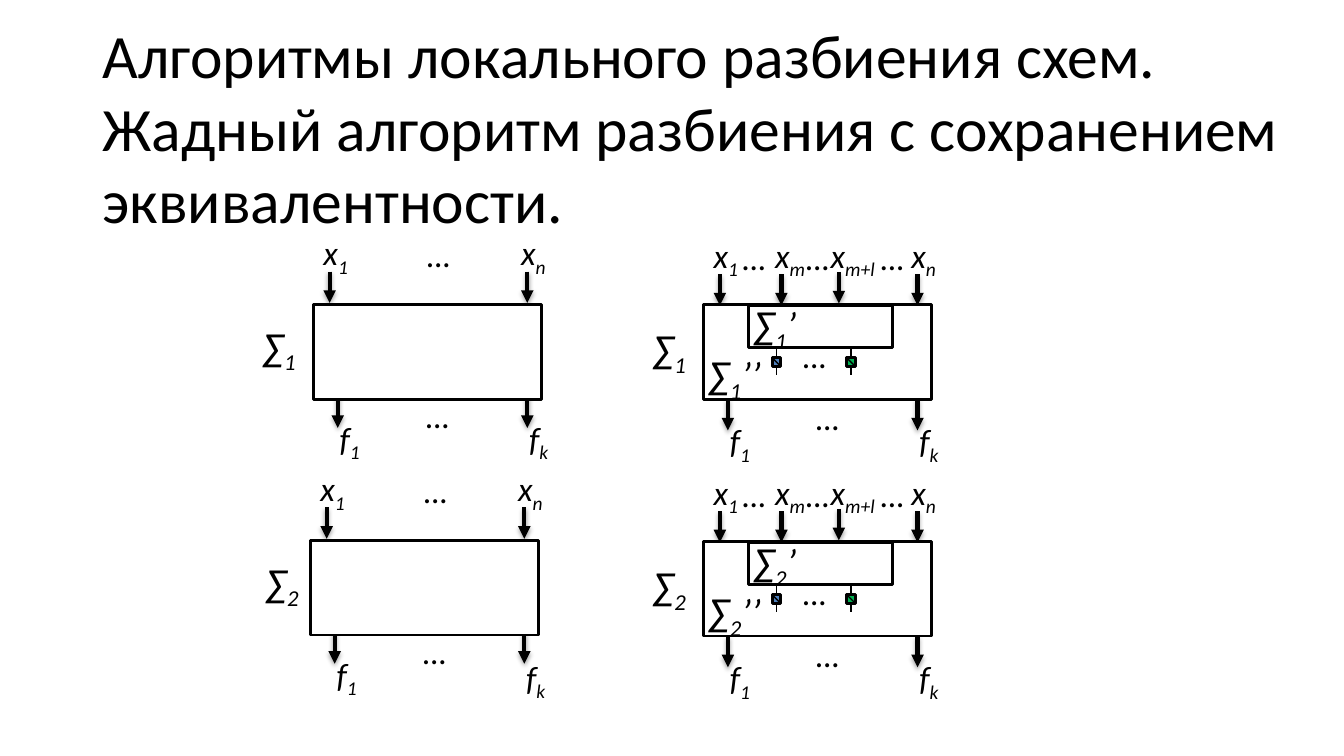
from pptx import Presentation, util as u
from pptx.dml.color import RGBColor
from pptx.enum import shapes, text
from pptx.oxml import parse_xml
from pptx.oxml.ns import nsdecls

BLACK = RGBColor(0x00, 0x00, 0x00)
WHITE = RGBColor(0xFF, 0xFF, 0xFF)
BLUE = RGBColor(0x4F, 0x81, 0xBD)
GREEN = RGBColor(0x00, 0xB0, 0x50)
CELL = 0.1
SHADOW = ('<a:outerShdw blurRad="40000" dist="23000" dir="5400000" rotWithShape="0">'
          '<a:srgbClr val="000000"><a:alpha val="35000"/></a:srgbClr></a:outerShdw>')


def grid(*cells):
    return [u.Inches(c * CELL) for c in cells]


def style(obj, formats):
    for name, value in formats.items():
        setattr(obj, name, value)


class Board:
    font = {"name": "Calibri", "italic": True}
    small, large = 24, 28

    def __init__(self, prs):
        self.s = prs.slides.add_slide(prs.slide_layouts[6])

    def label(self, x, y, w, h, parts, size, frame=None, **font):
        tf = self.s.shapes.add_textbox(*grid(x, y, w, h)).text_frame
        style(tf, {"word_wrap": True, "margin_right": 0, **(frame or {})})
        p = tf.paragraphs[0]
        for i, part in enumerate(parts):
            r = p.add_run()
            r.text = part
            style(r.font, {**self.font, "size": u.Pt(size), **font})
            r.font.color.rgb = BLACK
            if i == 1:
                r.font._element.set("baseline", "-25000")
        return p

    def title(self, x, y, w, h, words):
        frame = {"vertical_anchor": text.MSO_ANCHOR.MIDDLE,
                 "margin_bottom": u.Inches(0.59)}
        p = self.label(x, y, w, h, [words], 44, frame, italic=False)
        p.line_spacing = 0.98

    def variable(self, x, y, *parts, w=6.3):
        self.label(x, y, w, 5.5, parts, self.small)

    def dots(self, x, y):
        self.label(x, y, 6.3, 5, ["…"], self.small)

    def sigma(self, x, y, *parts, w=6.3):
        self.label(x, y, w, 6.3, ("∑",) + parts, self.large)

    def box(self, x, y, w, h, fill=WHITE):
        sp = self.s.shapes.add_shape(shapes.MSO_SHAPE.RECTANGLE, *grid(x, y, w, h))
        sp.shadow.inherit = False
        sp.fill.solid()
        sp.fill.fore_color.rgb = fill
        sp.line.color.rgb = BLACK
        sp.line.width = u.Pt(2)

    def line(self, x1, y1, x2, y2, width=1, effect=""):
        c = self.s.shapes.add_connector(shapes.MSO_CONNECTOR.STRAIGHT, *grid(x1, y1, x2, y2))
        c.line.color.rgb = BLACK
        c.line.width = u.Pt(width)
        c._element.spPr.append(parse_xml(
            f'<a:effectLst {nsdecls("a")}>{effect}</a:effectLst>'))
        return c

    def arrow(self, x, y):
        c = self.line(x, y, x, y + 3.1, 3, SHADOW)
        c.line._get_or_add_ln().append(
            parse_xml(f'<a:tailEnd {nsdecls("a")} type="triangle"/>'))

    def gate(self, x, y, fill):
        side = 0.84
        left, top = x - side / 2, y + 0.9
        self.line(x, y + 2.6, x, y)
        self.box(left, top, side, side, fill)
        self.line(left, top, left + side, top + side)

    def circuit(self, x, y, index, input_dots, lift=0, sigma_shift=0, fk_drop=0):
        ports = y - lift
        for dx, dy in ((1.6, -3), (21.2, -3), (2.4, 9.4), (21.2, 9.4)):
            self.arrow(x + dx, ports + dy)
        self.variable(x + 1.6, ports + 11, "f", "1")
        self.variable(x + 20.4, ports + 11 + fk_drop, "f", "k")
        self.box(x, y, 22.6, 9.4)
        self.sigma(x - 6 + sigma_shift, ports + 1.5, index)
        self.dots(x + 10.2, ports + 8.7)
        self.variable(x, ports - 7.4, "x", "1")
        self.variable(x + 19.6, ports - 7.4, "x", "n")
        for dx in input_dots:
            self.dots(x + dx, ports - 7.2)

    def split_circuit(self, x, y, index):
        self.circuit(x, y, index, (2.9, 9.2, 16.6))
        self.arrow(x + 7.7, y - 3)
        self.variable(x + 6.1, y - 7.4, "x", "m")
        self.variable(x + 11.6, y - 7.4, "x", "m+l", w=8.6)
        self.arrow(x + 13.4, y - 3.2)
        self.box(x + 4.4, y + 0.1, 14.3, 4.2)
        self.sigma(x + 4, y - 0.9, index, "’", w=6.4)
        self.gate(x + 7.2, y + 4.4, BLUE)
        self.dots(x + 8.9, y + 2.5)
        self.gate(x + 14.6, y + 4.4, GREEN)
        self.sigma(x - 0.5, y + 4.1, index, "’’", w=7.4)


def main():
    prs = Presentation()
    prs.slide_width, prs.slide_height = u.Inches(13.33), u.Inches(7.5)
    board = Board(prs)
    board.title(9.2, 4, 121.9, 23.1,
                "Алгоритмы локального разбиения схем. "
                "Жадный алгоритм разбиения с сохранением эквивалентности.")
    board.circuit(31.1, 30.2, "1", (10.3,), lift=0.25)
    board.circuit(30.8, 53.6, "2", (10.3,), lift=0.25, sigma_shift=0.6, fk_drop=0.3)
    for y, index in ((30.2, "1"), (53.7, "2")):
        board.split_circuit(69.8, y, index)
    prs.save("out.pptx")


if __name__ == "__main__":
    main()
